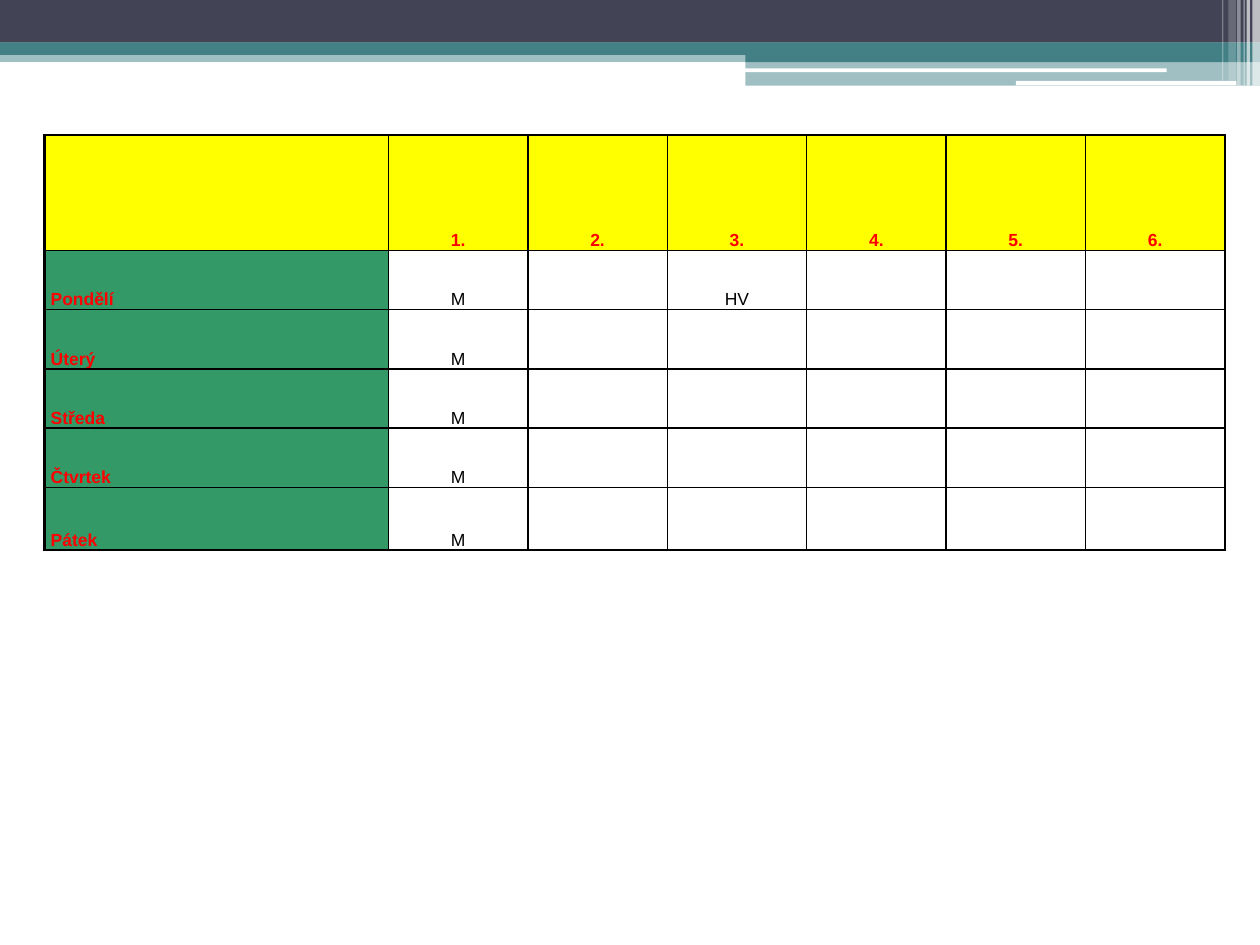
from lxml.etree import SubElement
from pptx import Presentation
from pptx.dml.color import RGBColor
from pptx.enum.shapes import MSO_SHAPE as Shape
from pptx.enum.text import MSO_ANCHOR as Anchor, PP_ALIGN as Align
from pptx.oxml.ns import qn
from pptx.util import Pt

COLORS = {
    "navy": "424456",
    "teal": "438086",
    "white": "FFFFFF",
    "black": "000000",
    "yellow": "FFFF00",
    "green": "339966",
    "red": "FF0000",
}
FONT = "Arial"
THIN, THICK = 1, 1.5

# Banner parts: left, top, width, height, colour, opacity in percent
BANNER_BARS = [
    (0, 28.8, 720, 6.6, "teal", 50),
    (0, 0, 720, 24.4, "navy", 100),
    (0, 24.2, 720, 7.2, "teal", 100),
    (426, 28.3, 294, 7.2, "teal", 100),
    (426, 35, 294, 14, "teal", 50),
]
BANNER_LINES = [
    (425.5, 39.1, 241.2, 2.2, "white", 100),
    (580.5, 46.2, 126, 2.6, "white", 100),
]
# Stripes at the right edge: left, width, height, opacity
STRIPES = [
    (715.7, 4.3, 48.9, 65),
    (712.3, 2, 48.9, 65),
    (710.6, 0.7, 48.9, 60),
    (707, 2, 48.9, 40),
    (702, 4.3, 46.1, 20),
    (698.4, 0.7, 46.1, 30),
]

TIMETABLE = [
    ["", "1.", "2.", "3.", "4.", "5.", "6."],
    ["Pondělí", "M", "", "HV", "", "", ""],
    ["Úterý", "M", "", "", "", "", ""],
    ["Středa", "M", "", "", "", "", ""],
    ["Čtvrtek", "M", "", "", "", "", ""],
    ["Pátek", "M", "", "", "", "", ""],
]
COLUMN_WIDTHS = [196.6] + [79.68] * 6
ROW_HEIGHTS = [65.9] + [33.9] * 4 + [35.9]


def rgb(name):
    return RGBColor.from_string(COLORS[name])


def add_bar(slide, left, top, width, height, color, opacity, kind=Shape.RECTANGLE):
    shape = slide.shapes.add_shape(kind, Pt(left), Pt(top), Pt(width), Pt(height))
    shape.shadow.inherit = False
    shape.line.fill.background()
    shape.fill.solid()
    shape.fill.fore_color.rgb = rgb(color)
    if opacity < 100:
        color_xml = shape._element.spPr.find(qn("a:solidFill"))[0]
        SubElement(color_xml, qn("a:alpha"), val=str(opacity * 1000))


def add_banner(slide):
    for bar in BANNER_BARS:
        add_bar(slide, *bar)
    for line in BANNER_LINES:
        add_bar(slide, *line, kind=Shape.ROUNDED_RECTANGLE)
    for left, width, height, opacity in STRIPES:
        add_bar(slide, left, 0, width, height, "white", opacity)


def write_text(frame, text, size=10, color="black", bold=False, align=Align.CENTER):
    paragraph = frame.paragraphs[0]
    paragraph.alignment = align
    run = paragraph.add_run()
    run.text = text
    run.font.name = FONT
    run.font.size = Pt(size)
    run.font.bold = bold
    run.font.color.rgb = rgb(color)


def set_borders(cell, **widths):
    properties = cell._tc.get_or_add_tcPr()
    for side, width in widths.items():
        line = SubElement(properties, qn(f"a:ln{side}"), w=str(Pt(width)))
        fill = SubElement(line, qn("a:solidFill"))
        SubElement(fill, qn("a:srgbClr"), val=COLORS["black"])


def format_cell(cell, text, row, column):
    # Thick lines only on the outer frame
    last_row, last_column = len(ROW_HEIGHTS) - 1, len(COLUMN_WIDTHS) - 1
    set_borders(
        cell,
        L=THICK if column == 0 else THIN,
        R=THICK if column == last_column else THIN,
        T=THICK if row == 0 else THIN,
        B=THICK if row == last_row else THIN,
    )
    is_heading = row == 0 or column == 0
    if is_heading:
        cell.fill.solid()
        cell.fill.fore_color.rgb = rgb("yellow" if row == 0 else "green")
    else:
        cell.fill.background()

    cell.vertical_anchor = Anchor.BOTTOM
    cell.margin_left = cell.margin_right = Pt(3.6)
    cell.margin_top = cell.margin_bottom = Pt(0)
    if text:
        write_text(
            cell.text_frame,
            text,
            color="red" if is_heading else "black",
            bold=is_heading,
            align=Align.LEFT if column == 0 else Align.CENTER,
        )


def add_timetable(slide, left, top):
    table = slide.shapes.add_table(
        len(ROW_HEIGHTS), len(COLUMN_WIDTHS), Pt(left), Pt(top),
        Pt(sum(COLUMN_WIDTHS)), Pt(sum(ROW_HEIGHTS)),
    ).table
    table.first_row = table.horz_banding = False
    for column, width in zip(table.columns, COLUMN_WIDTHS):
        column.width = Pt(width)
    for row, height in zip(table.rows, ROW_HEIGHTS):
        row.height = Pt(height)
    for row, texts in enumerate(TIMETABLE):
        for column, text in enumerate(texts):
            format_cell(table.cell(row, column), text, row, column)


def main():
    presentation = Presentation()
    presentation.slide_width, presentation.slide_height = Pt(720), Pt(540)
    slide = presentation.slides.add_slide(presentation.slide_layouts[6])
    add_banner(slide)
    add_timetable(slide, left=25.4, top=77.2)
    presentation.save("out.pptx")


if __name__ == "__main__":
    main()
